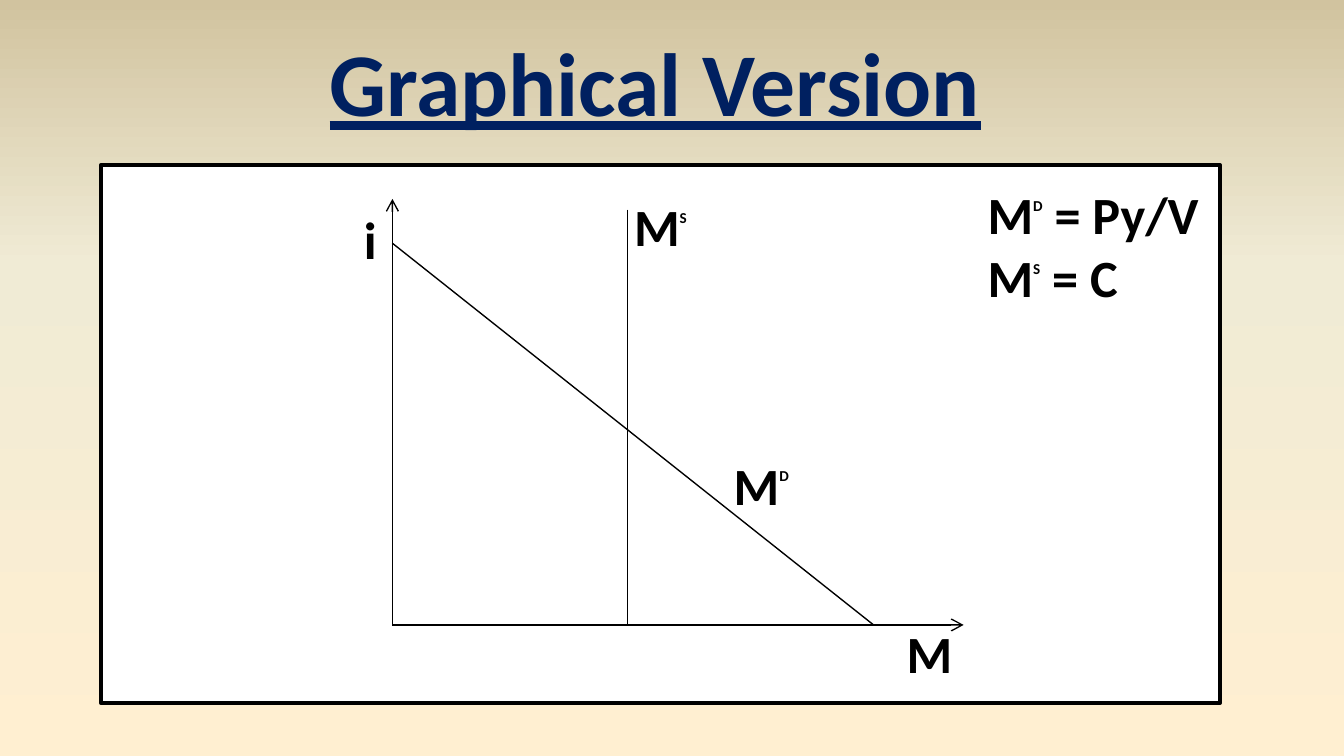
import pptx
import pptx.util
import pptx.dml.color
import pptx.enum.shapes
import pptx.enum.text
import pptx.oxml
import pptx.oxml.ns
import lxml.etree

Inches = pptx.util.Inches
Pt = pptx.util.Pt
qn = pptx.oxml.ns.qn
ALIGN = pptx.enum.text.PP_ALIGN

COLORS = {"title": "002060", "ink": "000000", "panel": "FFFFFF",
          "sand": "FFEFD1", "cream": "F0EBD5", "tan": "D1C39F"}
FONT = "Calibri"


def color(name):
    return pptx.dml.color.RGBColor.from_string(COLORS[name])


def sub(parent, tag, **attrs):
    return lxml.etree.SubElement(parent, qn(tag), **attrs)


def add_run(para, text, size, ink="ink", raised=False):
    run = para.add_run()
    run.text = text
    font = run.font
    font.name, font.size, font.bold = FONT, Pt(size), True
    font.color.rgb = color(ink)
    if raised:
        font._element.set("baseline", "90000")
    return run


def add_frame(slide, left, top, width, height, wrap=True):
    box = slide.shapes.add_textbox(*map(Inches, (left, top, width, height)))
    frame = box.text_frame
    frame.word_wrap = wrap
    frame.auto_size = pptx.enum.text.MSO_AUTO_SIZE.SHAPE_TO_FIT_TEXT
    return frame


def add_symbol(para, base, mark="", rest=""):
    """Write a symbol with an optional raised mark and what follows it."""
    add_run(para, base, 28)
    if mark:
        add_run(para, mark, 14, raised=True)
    if rest:
        add_run(para, rest, 28)


def add_line(slide, start, end, arrow=False):
    line = slide.shapes.add_connector(
        pptx.enum.shapes.MSO_CONNECTOR.STRAIGHT,
        *map(Inches, (*start, *end)))
    line.line.color.rgb = color("ink")
    line.line.width = Pt(0.75)
    if arrow:
        sub(line.line._get_or_add_ln(), "a:tailEnd", type="arrow")
    sub(line._element.spPr, "a:effectLst")


def paint_back(slide):
    fill = slide.background.fill
    fill.gradient()
    fill.gradient_angle = 90  # runs from bottom to top
    stops = slide._element.find(".//" + qn("a:gsLst"))
    for stop in list(stops):
        stops.remove(stop)
    for pos, name in ((0, "sand"), (65, "cream"), (100, "tan")):
        stop = sub(stops, "a:gs", pos=str(pos * 1000))
        sub(stop, "a:srgbClr", val=COLORS[name])


def add_title(slide, left, top, width, height):
    para = add_frame(slide, left, top, width, height, wrap=False).paragraphs[0]
    para.alignment = ALIGN.CENTER
    add_run(para, "Graphical Version", 48, "title").font.underline = True


def add_panel(slide, left, top, width, height):
    panel = slide.shapes.add_shape(
        pptx.enum.shapes.MSO_SHAPE.RECTANGLE,
        *map(Inches, (left, top, width, height)))
    panel.shadow.inherit = False
    panel.fill.solid()
    panel.fill.fore_color.rgb = color("panel")
    panel.line.color.rgb = color("ink")
    panel.line.width = Pt(2)


def add_rules(slide, left, top, width, height):
    frame = add_frame(slide, left, top, width, height)
    add_symbol(frame.paragraphs[0], "M", "D", " = Py/V")
    add_symbol(frame.add_paragraph(), "M", "S", " = C")


def add_graph(slide, left, top, width, height):
    """Draw the money market; the box spans the two axes."""
    right, base = left + width, top + height
    corner = (left, base)
    supply = left + 1.75

    # Supply, demand, then the axes
    add_line(slide, (supply, top + 0.08), (supply, base))
    add_line(slide, (left, top + 0.33), (left + 3.58, base))
    add_line(slide, corner, (left, top), arrow=True)
    add_line(slide, corner, (right, base), arrow=True)

    # Labels, offset from the top left of the box
    for x, y, name, mark in ((2.41, 1.84, "M", "D"),
                             (1.66, -0.08, "M", "S"),
                             (-0.5, 0.01, "i", ""),
                             (3.66, 3.09, "M", "")):
        para = add_frame(slide, left + x, top + y, 0.67, 0.57).paragraphs[0]
        para.alignment = ALIGN.CENTER
        add_symbol(para, name, mark)


def main():
    deck = pptx.Presentation()
    deck.slide_width, deck.slide_height = Pt(720), Pt(405)  # 16:9
    slide = deck.slides.add_slide(deck.slide_layouts[6])
    paint_back(slide)
    add_title(slide, 2.33, 0.15, 5.09, 0.91)
    add_panel(slide, 0.75, 1.23, 8.33, 4)
    add_rules(slide, 7.25, 1.31, 1.92, 1.04)
    add_graph(slide, 2.92, 1.48, 4.25, 3.17)
    deck.save("out.pptx")


if __name__ == "__main__":
    main()
